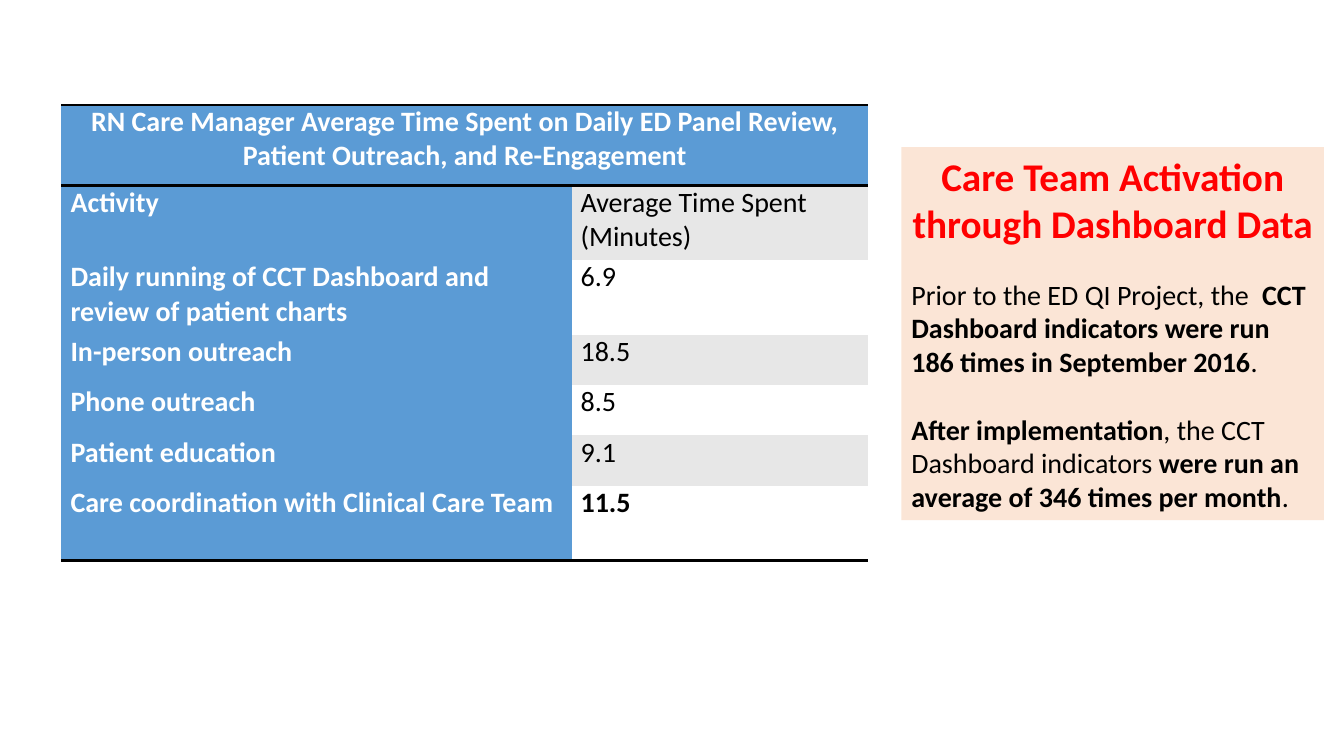
import lxml.etree
import pptx
import pptx.dml.color
import pptx.enum.shapes
import pptx.enum.text
import pptx.oxml.ns
import pptx.util

WIDTH, HEIGHT = 13.33, 7.5
BLUE, GRAY, PEACH = "5B9BD5", "E7E7E7", "FBE5D6"
WHITE, BLACK, RED = "FFFFFF", "000000", "FF0000"
NO_GRID_STYLE = "{2D5ABB26-0587-4C30-8999-92F81FD0307C}"
CENTER = pptx.enum.text.PP_ALIGN.CENTER
LEFT = pptx.enum.text.PP_ALIGN.LEFT

TABLE_TITLE = ("RN Care Manager Average Time Spent on Daily ED Panel Review, "
               "Patient Outreach, and Re-Engagement")
ACTIVITIES = [
    ("Activity", "Average Time Spent (Minutes)"),
    ("Daily running of CCT Dashboard and review of patient charts", "6.9"),
    ("In-person outreach", "18.5"),
    ("Phone outreach", "8.5"),
    ("Patient education", "9.1"),
    ("Care coordination with Clinical Care Team", "11.5"),
]
COLUMN_SHARES = (0.6325, 0.3675)
ROW_HEIGHTS = (0.8, 0.74, 0.74, 0.5, 0.5, 0.5, 0.74)

CALLOUT = [
    (CENTER, 28, RED, 0, [("Care Team Activation through Dashboard Data", True)]),
    (LEFT, 20, BLACK, 22, [
        ("Prior to the ED QI Project, the  ", False),
        ("CCT Dashboard indicators were run 186 times in September 2016", True),
        (".", False)]),
    (LEFT, 20, BLACK, 24.4, [
        ("After implementation", True),
        (", the CCT Dashboard indicators ", False),
        ("were run an average of 346 times per month", True),
        (".", False)]),
]


def color(value):
    """Turn a hex string into a colour."""
    return pptx.dml.color.RGBColor.from_string(value)


def paint(target, value):
    """Fill a shape or cell with a solid colour."""
    target.fill.solid()
    target.fill.fore_color.rgb = color(value)


def style_font(font, size, value, bold):
    """Set the typeface, size, colour and weight of a font."""
    font.name = "Calibri"
    font.size = pptx.util.Pt(size)
    font.color.rgb = color(value)
    font.bold = bold


def add_rule(cell, edge):
    """Draw a black line along the top (T) or bottom (B) edge of a cell."""
    line = lxml.etree.Element(pptx.oxml.ns.qn(f"a:ln{edge}"), w=str(pptx.util.Pt(2)))
    fill = lxml.etree.SubElement(line, pptx.oxml.ns.qn("a:solidFill"))
    lxml.etree.SubElement(fill, pptx.oxml.ns.qn("a:srgbClr"), val=BLACK)
    cell._tc.get_or_add_tcPr().insert(0, line)


def fill_cell(cell, text, background, value, bold, align=LEFT):
    """Write and format the text of one table cell."""
    paint(cell, background)
    cell.margin_left = cell.margin_right = pptx.util.Inches(0.09)
    cell.margin_top = cell.margin_bottom = 0
    para = cell.text_frame.paragraphs[0]
    para.text = text
    para.alignment = align
    style_font(para.runs[0].font, 20, value, bold)


def add_time_table(slide, left, top, width):
    """Build the table of average minutes per activity."""
    frame = slide.shapes.add_table(
        len(ROW_HEIGHTS), len(COLUMN_SHARES), pptx.util.Inches(left),
        pptx.util.Inches(top), pptx.util.Inches(width),
        pptx.util.Inches(sum(ROW_HEIGHTS)))
    table = frame.table
    table._tbl.tblPr.find(pptx.oxml.ns.qn("a:tableStyleId")).text = NO_GRID_STYLE
    for column, share in zip(table.columns, COLUMN_SHARES):
        column.width = pptx.util.Inches(width * share)
    for row, height in zip(table.rows, ROW_HEIGHTS):
        row.height = pptx.util.Inches(height)

    header = table.cell(0, 0)
    header.merge(table.cell(0, 1))
    fill_cell(header, TABLE_TITLE, BLUE, WHITE, True, CENTER)
    last = len(ACTIVITIES)
    for index, (activity, minutes) in enumerate(ACTIVITIES, 1):
        fill_cell(table.cell(index, 0), activity, BLUE, WHITE, True)
        band = GRAY if index % 2 else WHITE
        fill_cell(table.cell(index, 1), minutes, band, BLACK, index == last)
    for column in range(len(COLUMN_SHARES)):
        for row, edge in ((0, "B"), (0, "T"), (last, "B")):
            add_rule(table.cell(row, column), edge)


def add_callout(slide, left, top, width, height):
    """Build the shaded box on care team activation."""
    box = slide.shapes.add_shape(
        pptx.enum.shapes.MSO_SHAPE.RECTANGLE,
        *map(pptx.util.Inches, (left, top, width, height)))
    box.shadow.inherit = False
    paint(box, PEACH)
    box.line.fill.background()
    frame = box.text_frame
    frame.word_wrap = True
    frame.vertical_anchor = pptx.enum.text.MSO_ANCHOR.TOP
    for index, (align, size, value, gap, spans) in enumerate(CALLOUT):
        para = frame.add_paragraph() if index else frame.paragraphs[0]
        para.alignment = align
        para.space_before = pptx.util.Pt(gap)
        for text, bold in spans:
            span = para.add_run()
            span.text = text
            style_font(span.font, size, value, bold)


def main():
    """Build and save the one-slide deck."""
    deck = pptx.Presentation()
    deck.slide_width = pptx.util.Inches(WIDTH)
    deck.slide_height = pptx.util.Inches(HEIGHT)
    slide = deck.slides.add_slide(deck.slide_layouts[6])
    add_time_table(slide, 0.61, 1.04, 0.6 * WIDTH)
    add_callout(slide, 8.94, 1.46, 4.19, 3.7)
    deck.save("out.pptx")


if __name__ == "__main__":
    main()
